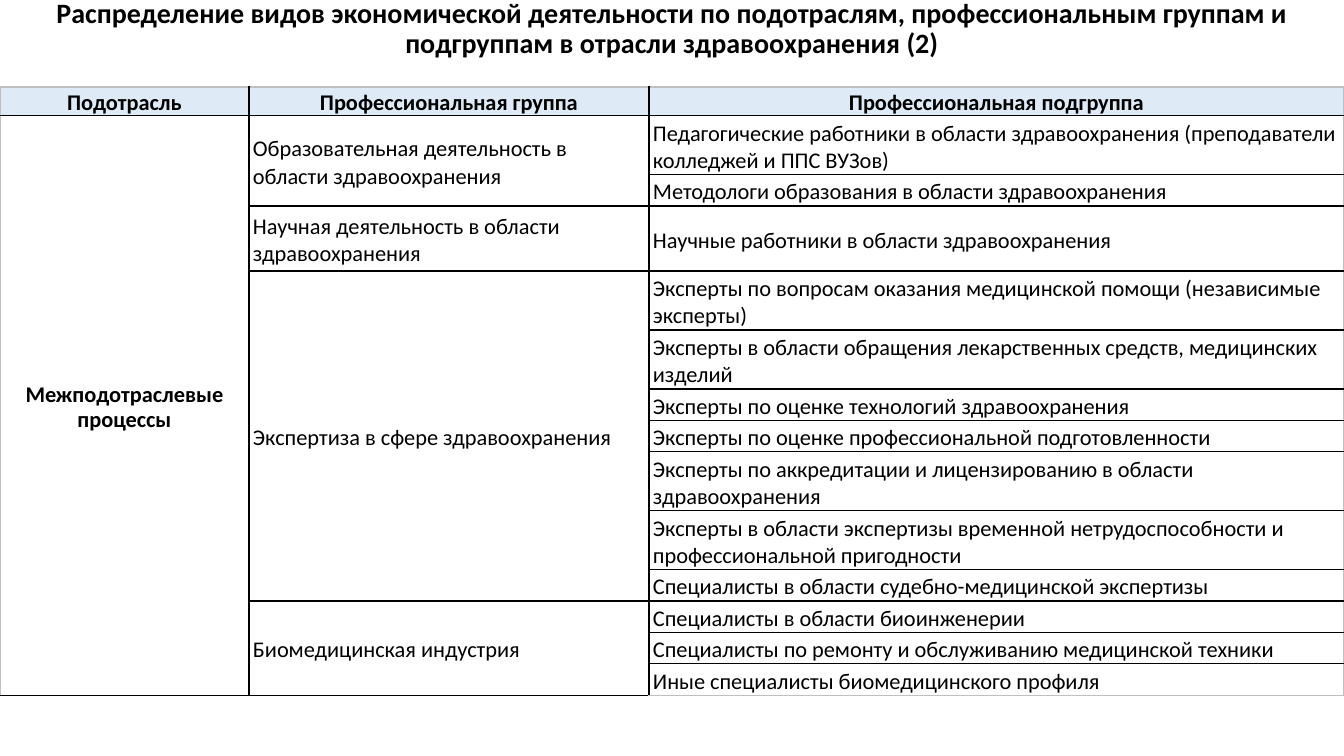
import pptx
import pptx.util
import pptx.dml.color
import pptx.enum.text
import pptx.oxml
import pptx.oxml.ns

EMU_PER_PX = 914400 / 100.8
SLIDE_WIDTH, SLIDE_HEIGHT = 1344, 756
FONT = "Calibri"
ALIGN = pptx.enum.text.PP_ALIGN
MIDDLE = pptx.enum.text.MSO_ANCHOR.MIDDLE

TITLE = ("Распределение видов экономической деятельности по подотраслям, "
         "профессиональным группам и подгруппам в отрасли здравоохранения (2)")
HEADINGS = ["Подотрасль", "Профессиональная группа", "Профессиональная подгруппа"]
SUBSECTOR = "Межподотраслевые процессы"
COLUMN_WIDTHS = [249, 400, 695]
HEADER_HEIGHT, ONE_LINE, TWO_LINES, SCIENCE_ROW = 28, 31, 59, 65

# Each professional group holds its subgroups with their row heights.
GROUPS = {
    "Образовательная деятельность в области здравоохранения": [
        ("Педагогические работники в области здравоохранения "
         "(преподаватели колледжей и ППС ВУЗов)", TWO_LINES),
        ("Методологи образования в области здравоохранения", ONE_LINE),
    ],
    "Научная деятельность в области здравоохранения": [
        ("Научные работники в области здравоохранения", SCIENCE_ROW),
    ],
    "Экспертиза в сфере здравоохранения": [
        ("Эксперты по вопросам оказания медицинской помощи (независимые эксперты)", TWO_LINES),
        ("Эксперты в области обращения лекарственных средств, медицинских изделий", TWO_LINES),
        ("Эксперты по оценке технологий здравоохранения", ONE_LINE),
        ("Эксперты по оценке профессиональной подготовленности", ONE_LINE),
        ("Эксперты по аккредитации и лицензированию в области здравоохранения", TWO_LINES),
        ("Эксперты в области экспертизы временной нетрудоспособности "
         "и профессиональной пригодности", TWO_LINES),
        ("Специалисты в области судебно-медицинской экспертизы", ONE_LINE),
    ],
    "Биомедицинская индустрия": [
        ("Специалисты в области биоинженерии", ONE_LINE),
        ("Специалисты по ремонту и обслуживанию медицинской техники", ONE_LINE),
        ("Иные специалисты биомедицинского профиля", ONE_LINE),
    ],
}


def px(length):
    return pptx.util.Emu(round(length * EMU_PER_PX))


def color(hex_string):
    return pptx.dml.color.RGBColor.from_string(hex_string)


def format_paragraph(paragraph, size, bold, align, spacing):
    paragraph.alignment = align
    paragraph.line_spacing = spacing
    paragraph.font.name = FONT
    paragraph.font.size = pptx.util.Pt(size)
    paragraph.font.bold = bold
    paragraph.font.color.rgb = color("000000")


def add_title(slide, left, top, width, height):
    title = slide.shapes.title
    title.left, title.top, title.width, title.height = map(px, (left, top, width, height))
    frame = title.text_frame
    frame.text = TITLE
    frame.word_wrap = True
    frame.auto_size = pptx.enum.text.MSO_AUTO_SIZE.NONE
    frame.vertical_anchor = MIDDLE
    frame.margin_left = frame.margin_right = frame.margin_top = frame.margin_bottom = 0
    format_paragraph(frame.paragraphs[0], 20, True, ALIGN.CENTER, 0.9)


def set_borders(cell, outer_sides):
    """Draw black inner borders and grey ones on the table's outer sides."""
    properties = cell._tc.get_or_add_tcPr()
    for position, side in enumerate("LRTB"):
        shade = "BFBFBF" if side in outer_sides else "000000"
        properties.insert(position, pptx.oxml.parse_xml(
            f'<a:ln{side} {pptx.oxml.ns.nsdecls("a")} w="12700"><a:solidFill>'
            f'<a:srgbClr val="{shade}"/></a:solidFill></a:ln{side}>'))


def format_cell(cell, is_header, is_centred, outer_sides):
    cell.margin_left = cell.margin_right = cell.margin_top = px(4)
    cell.margin_bottom = 0
    cell.vertical_anchor = MIDDLE
    if is_header:
        cell.fill.solid()
        cell.fill.fore_color.rgb = color("DEEBF7")
    else:
        cell.fill.background()
    set_borders(cell, outer_sides)
    format_paragraph(cell.text_frame.paragraphs[0], 16, is_centred,
                     ALIGN.CENTER if is_centred else ALIGN.LEFT,
                     0.9 if is_centred else 1.0)


def add_group_table(slide, left, top, width):
    subgroups = [subgroup for members in GROUPS.values() for subgroup in members]
    heights = [HEADER_HEIGHT] + [height for _, height in subgroups]
    last_row, last_column = len(subgroups), len(HEADINGS) - 1
    table = slide.shapes.add_table(last_row + 1, last_column + 1, px(left), px(top),
                                   px(width), px(sum(heights))).table
    table.first_row = table.horz_banding = False
    for column, column_width in zip(table.columns, COLUMN_WIDTHS):
        column.width = px(column_width)
    for row, height in zip(table.rows, heights):
        row.height = px(height)

    for column, heading in enumerate(HEADINGS):
        table.cell(0, column).text = heading
    table.cell(1, 0).text = SUBSECTOR
    table.cell(1, 0).merge(table.cell(last_row, 0))
    for row, (subgroup, _) in enumerate(subgroups, 1):
        table.cell(row, 2).text = subgroup
    first = 1
    for group, members in GROUPS.items():
        table.cell(first, 1).text = group
        if len(members) > 1:
            table.cell(first, 1).merge(table.cell(first + len(members) - 1, 1))
        first += len(members)

    for row in range(last_row + 1):
        for column in range(last_column + 1):
            outer_sides = [side for side, is_outer in (
                ("L", column == 0), ("R", column == last_column),
                ("T", row == 0), ("B", row == last_row)) if is_outer]
            format_cell(table.cell(row, column), row == 0,
                        row == 0 or column == 0, outer_sides)


def main():
    presentation = pptx.Presentation()
    presentation.slide_width, presentation.slide_height = px(SLIDE_WIDTH), px(SLIDE_HEIGHT)
    slide = presentation.slides.add_slide(presentation.slide_layouts[5])
    add_title(slide, 0, 0, SLIDE_WIDTH, 59)
    add_group_table(slide, 0, 87, SLIDE_WIDTH)
    presentation.save("out.pptx")


if __name__ == "__main__":
    main()
